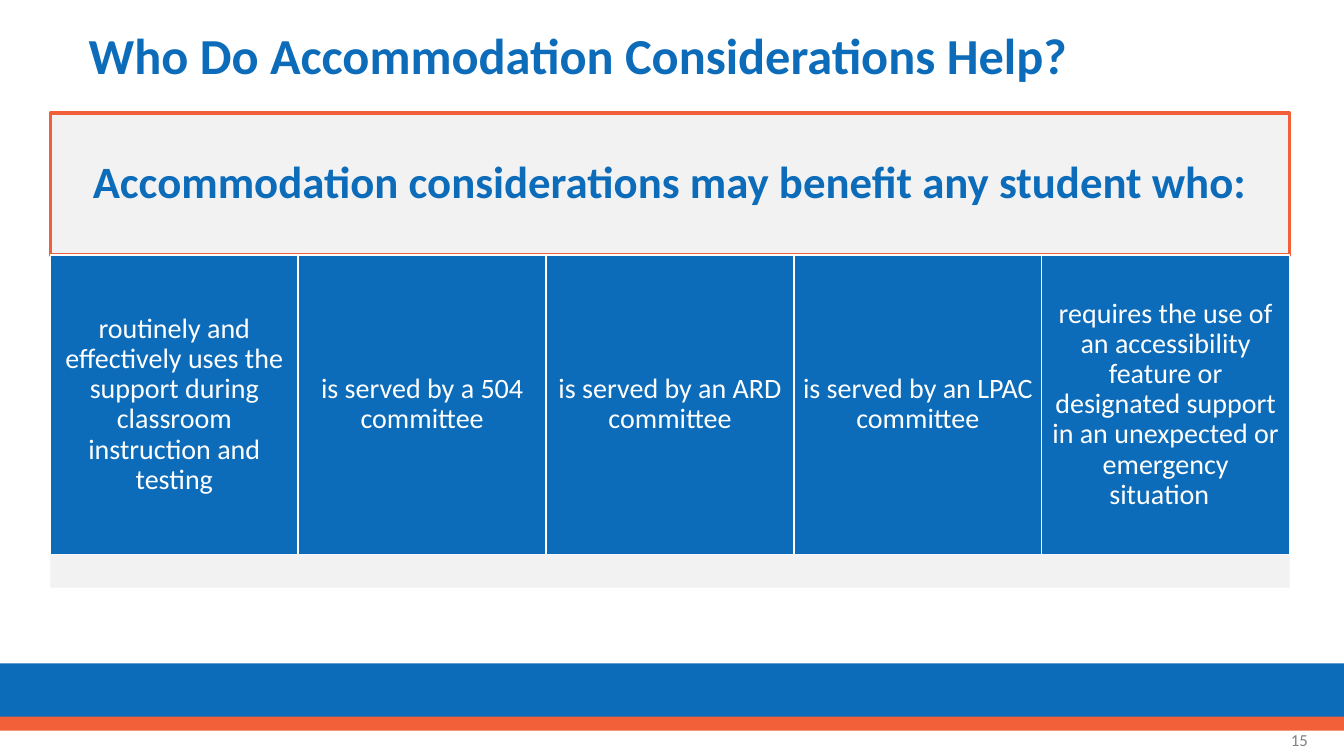
from pptx import Presentation
from pptx.dml.color import RGBColor
from pptx.enum.shapes import MSO_SHAPE as Shape
from pptx.enum.text import MSO_ANCHOR as Anchor, MSO_AUTO_SIZE as Fit, PP_ALIGN as Align
from pptx.util import Inches, Pt

BLUE, CORAL, PALE, WHITE, GRAY = "0D6CB9", "F16038", "F2F2F2", "FFFFFF", "808080"


def color(code):
    return RGBColor.from_string(code)


def write(frame, text, size=20, ink=WHITE, bold=False, align=Align.CENTER,
          lead=0.9, pad=None):
    frame.word_wrap = True
    frame.auto_size = Fit.NONE
    frame.vertical_anchor = Anchor.MIDDLE
    if pad is not None:
        frame.margin_left = frame.margin_right = Inches(pad)
        frame.margin_top = frame.margin_bottom = Inches(pad)
    para = frame.paragraphs[0]
    para.alignment = align
    para.line_spacing = lead
    run = para.add_run()
    run.text = text
    font = run.font
    font.name, font.size, font.bold = "Calibri", Pt(size), bold
    font.color.rgb = color(ink)


class Deck:
    def __init__(self):
        self.show = Presentation()
        self.show.slide_width = Inches(13.33)
        self.show.slide_height = Inches(7.5)
        self.slide = self.show.slides.add_slide(self.show.slide_layouts[5])

    def title(self, text, *area):
        head = self.slide.shapes.title
        head.left, head.top, head.width, head.height = map(Inches, area)
        write(head.text_frame, text, size=36, ink=BLUE, bold=True, align=Align.LEFT)

    def block(self, *area, fill, line=None, width=1):
        box = self.slide.shapes.add_shape(Shape.RECTANGLE, *map(Inches, area))
        box.shadow.inherit = False
        box.fill.solid()
        box.fill.fore_color.rgb = color(fill)
        if line:
            box.line.color.rgb = color(line)
            box.line.width = Pt(width)
        else:
            box.line.fill.background()
        return box.text_frame

    def label(self, text, *area, **style):
        box = self.slide.shapes.add_textbox(*map(Inches, area))
        write(box.text_frame, text, **style)


def main():
    deck = Deck()

    # Footer bands
    deck.block(0, 6.58, 13.33, 0.58, fill=BLUE)
    deck.block(0, 7.11, 13.33, 0.14, fill=CORAL)

    # Title
    deck.title("Who Do Accommodation Considerations Help?", 0.78, 0.17, 12.16, 0.82)

    # Heading panel
    left, wide = 0.5, 12.29
    panel = deck.block(left, 1.12, wide, 1.41, fill=PALE, line=CORAL, width=2.5)
    write(panel, "Accommodation considerations may benefit any student who:",
          size=32, ink=BLUE, bold=True, pad=0.13)

    # Student groups
    groups = [
        "routinely and effectively uses the support during classroom instruction and testing",
        "is served by a 504 committee",
        "is served by an ARD committee",
        "is served by an LPAC committee",
        "requires the use of an accessibility feature or designated support "
        "in an unexpected or emergency situation  ",
    ]
    step = wide / len(groups)
    for i, text in enumerate(groups):
        cell = deck.block(left + i * step, 2.53, step, 2.97, fill=BLUE, line=WHITE)
        write(cell, text, pad=0.08)

    # Base strip and page number
    deck.block(left, 5.5, wide, 0.33, fill=PALE)
    deck.label("15", 10.07, 7.14, 3, 0.4, size=12, ink=GRAY, align=Align.RIGHT, lead=1.0)

    deck.show.save("out.pptx")


if __name__ == "__main__":
    main()
